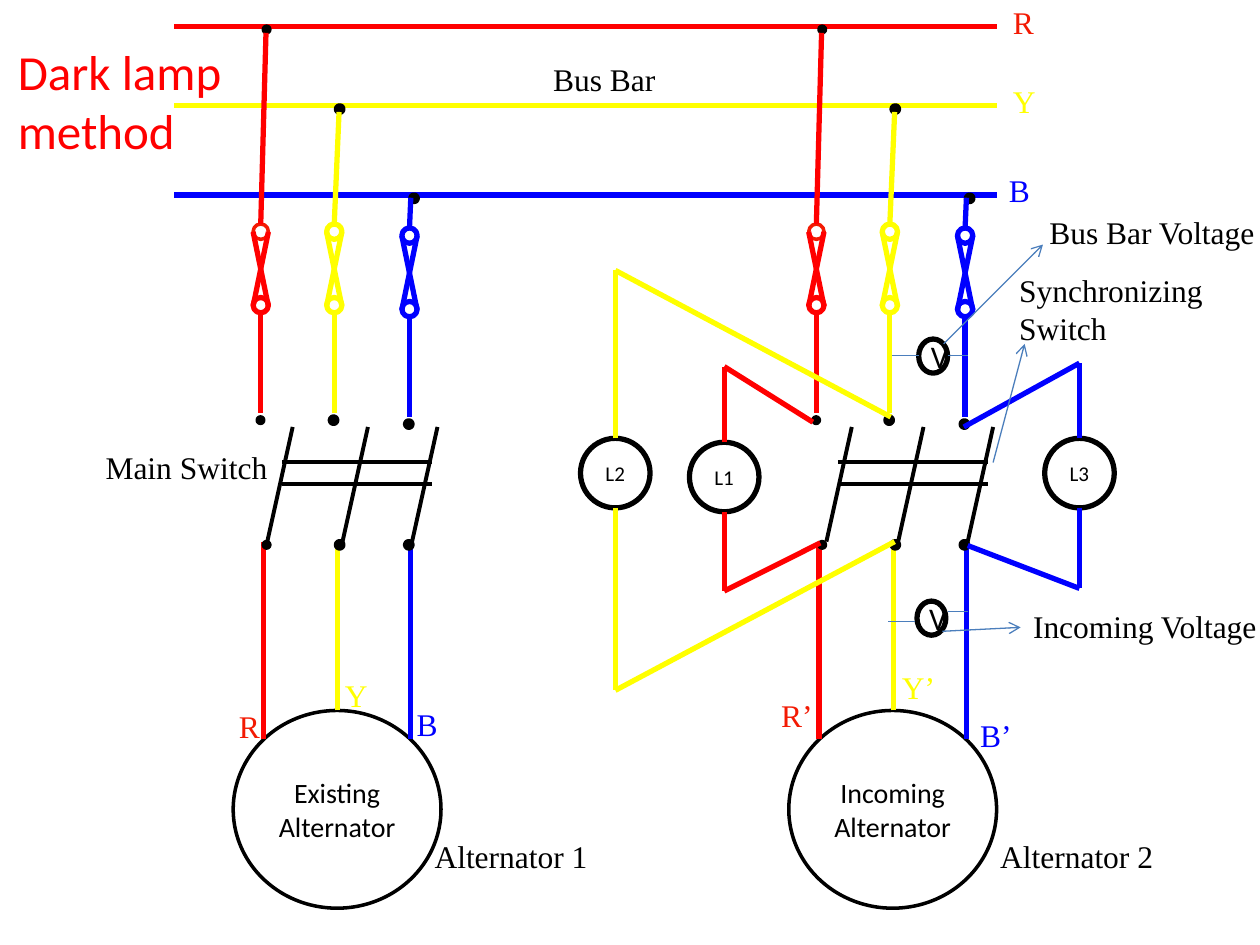
from dataclasses import dataclass

import pptx
import pptx.dml.color
import pptx.enum.shapes
import pptx.enum.text
import pptx.oxml
import pptx.oxml.ns
import pptx.util

Pt = pptx.util.Pt
RGBColor = pptx.dml.color.RGBColor
Shape = pptx.enum.shapes.MSO_SHAPE
Align = pptx.enum.text.PP_ALIGN
Anchor = pptx.enum.text.MSO_ANCHOR
Fit = pptx.enum.text.MSO_AUTO_SIZE
Point = tuple[float, float]

RED = RGBColor(0xFF, 0x00, 0x00)
BRICK = RGBColor(0xF3, 0x1A, 0x03)
YELLOW = RGBColor(0xFF, 0xFF, 0x00)
BLUE = RGBColor(0x00, 0x00, 0xFF)
STEEL = RGBColor(0x4B, 0x7E, 0xBC)
BLACK = RGBColor(0, 0, 0)
WHITE = RGBColor(0xFF, 0xFF, 0xFF)

SHIFT = 317.5  # from the existing to the incoming machine
DOT, RING, SPAN = 3.75, 8.75, 42
POLE = 309.5  # lower switch contacts


@dataclass
class Phase:
    color: RGBColor
    bus: float  # height of the bus bar
    tap: float  # left of the dot on the bus bar
    top: Point  # upper end of the wire to the fuse
    fuse: Point  # top centre of the fuse
    upper: float  # left of the upper contact
    lower: float  # left of the lower contact
    lead: Point  # where the lead meets the machine
    edge: float  # dot outline width
    rim: RGBColor  # upper fuse ring colour
    width: float  # upper fuse ring width


@dataclass
class Lamp:
    name: str
    color: RGBColor
    left: float
    top: float
    peak: float
    base: float
    start: Point
    end: Point


@dataclass
class Label:
    text: str
    left: float
    top: float
    width: float
    color: RGBColor = BLACK


PHASES = [
    Phase(RED, 15, 150.5, (152, 18.75), (149, 128), 147, 150.5,
          (150.5, 422.5), 2, BRICK, 2),
    Phase(YELLOW, 60.5, 192.25, (193.75, 64), (191, 128), 188.75, 192.25,
          (193, 406), 3, YELLOW, 3),
    Phase(BLUE, 111.5, 234.75, (234.75, 113), (234, 130.25), 231.75, 231.75,
          (234.75, 422.5), 3, BLUE, 3),
]
BLADES = [152.75, 195.75, 235.5, 472.25, 513.25, 553]
LAMPS = [
    Lamp("L1", RED, 394, 252.75, 209.5, 337.75, (464.5, 241.25), (468.75, 310.25)),
    Lamp("L2", YELLOW, 331.75, 250.5, 154.5, 394.5, (509, 238.25), (511.25, 309.5)),
    Lamp("L3", BLUE, 597, 250.5, 207.5, 336.25, (550.75, 244), (553, 311.75)),
]
LABELS = [
    Label("Alternator 1", 241.25, 474.5, 103),
    Label("Alternator 2", 564.5, 474.5, 103),
    Label("R", 571.75, -2, 26.75, BRICK),
    Label("R", 129.5, 400.5, 26.75, BRICK),
    Label("R’", 439.25, 394, 32.5, BRICK),
    Label("Y", 571.75, 43.25, 27.5, YELLOW),
    Label("Y’", 508.25, 378, 33.75, YELLOW),
    Label("Y", 190, 382.5, 28, YELLOW),
    Label("B", 569.5, 94.25, 26.75, BLUE),
    Label("B’", 553, 405.5, 32.5, BLUE),
    Label("B", 231, 399.5, 26.75, BLUE),
    Label("Main Switch", 53.25, 252.75, 108),
    Label("Synchronizing\nSwitch", 575.25, 151.25, 125.25),
    Label("Bus Bar", 309, 31, 73.5),
    Label("Bus Bar Voltage", 592.5, 118, 133.25),
    Label("Incoming Voltage", 583.25, 343.5, 143.25),
]


def write(frame, text: str, size: float, font: str, color: RGBColor, align=None) -> None:
    for num, line in enumerate(text.split("\n")):
        para = frame.paragraphs[0] if num == 0 else frame.add_paragraph()
        para.alignment = align
        run = para.add_run()
        run.text = line
        run.font.size, run.font.name = Pt(size), font
        run.font.color.rgb = color


def wire(start: Point, end: Point, color: RGBColor, width: float = 3,
         arrow: bool = False) -> None:
    line = shapes.add_connector(pptx.enum.shapes.MSO_CONNECTOR.STRAIGHT,
                                *map(Pt, start + end))
    line.line.color.rgb = color
    line.line.width = Pt(width)
    if arrow:
        tail = pptx.oxml.parse_xml(
            f'<a:tailEnd {pptx.oxml.ns.nsdecls("a")} type="arrow"/>')
        line.line._get_or_add_ln().append(tail)
    line._element.spPr.append(
        pptx.oxml.parse_xml(f'<a:effectLst {pptx.oxml.ns.nsdecls("a")}/>'))


def disc(left: float, top: float, width: float, height: float, edge: float,
         rim: RGBColor = BLACK, fill: RGBColor = WHITE,
         text: str = "", size: float = 18) -> None:
    oval = shapes.add_shape(Shape.FLOWCHART_CONNECTOR,
                            *map(Pt, (left, top, width, height)))
    oval.shadow.inherit = False
    oval.fill.solid()
    oval.fill.fore_color.rgb = fill
    oval.line.color.rgb = rim
    oval.line.width = Pt(edge)
    if text:
        oval.text_frame.vertical_anchor = Anchor.MIDDLE
        write(oval.text_frame, text, size, "Calibri", BLACK, Align.CENTER)


def dot(left: float, top: float, edge: float) -> None:
    disc(left, top, DOT, DOT, edge, fill=BLACK)


def branch(part: Phase, dx: float) -> None:
    """Draw one phase from the bus bar down to the machine."""
    x, y = part.fuse[0] + dx, part.fuse[1]
    half = RING / 2
    foot = (part.lead[0] + dx, part.lead[1])
    wire(foot, (foot[0], POLE), part.color)
    dot(part.lower + dx, POLE, part.edge)
    dot(part.tap + dx, part.bus, part.edge)
    disc(x - half, y, RING, RING, part.width, part.rim)
    disc(x - half, y + SPAN, RING, RING, 3, part.color)
    for side in (-half, half):
        wire((x + side, y + 47), (x - side, y + 4.5), part.color)
    wire((part.top[0] + dx, part.top[1]), (x, y), part.color)
    wire((x, y + 51.25), (x, y + 108.25), part.color)
    dot(part.upper + dx, y + 110.25, part.edge)


def light(lamp: Lamp) -> None:
    size = 39.75
    mid = lamp.left + size / 2
    disc(lamp.left, lamp.top, size, size, 3, text=lamp.name, size=12)
    for rim, far, end in ((lamp.top, lamp.peak, lamp.start),
                          (lamp.top + size, lamp.base, lamp.end)):
        wire((mid, rim), (mid, far), lamp.color)
        wire((mid, far), end, lamp.color)


def note(label: Label) -> None:
    height = 29 + 22 * label.text.count("\n")
    box = shapes.add_textbox(*map(Pt, (label.left, label.top, label.width, height)))
    box.text_frame.word_wrap = False
    box.text_frame.auto_size = Fit.SHAPE_TO_FIT_TEXT
    write(box.text_frame, label.text, 18, "Times New Roman", label.color)


deck = pptx.Presentation()
deck.slide_width, deck.slide_height = Pt(720), Pt(540)
slide = deck.slides.add_slide(deck.slide_layouts[5])
shapes = slide.shapes

# Title
title = shapes.title
title.left, title.top, title.width, title.height = map(Pt, (3, 20, 142, 75))
title.text_frame.auto_size = Fit.NONE
title.text_frame.vertical_anchor = Anchor.TOP
write(title.text_frame, "Dark lamp\nmethod", 28, "Calibri", RED, Align.LEFT)

# Bus bars
for part in PHASES:
    wire((99.5, part.bus), (569.5, part.bus), part.color)

# Machines with their three phases
for dx, name in ((0, "Existing Alternator"), (SHIFT, "Incoming Alternator")):
    disc(133.25 + dx, 406, 118.75, 113, 2, text=name, size=16)
    for part in PHASES:
        branch(part, dx)
    for y in (264.25, 276.5):
        wire((161.25 + dx, y), (247 + dx, y), BLACK, 2.25)

# Switch blades and lamps
for x in BLADES:
    wire((x, POLE), (x + 14.5, 244), BLACK, 2.25)
for lamp in LAMPS:
    light(lamp)

# Voltmeters and their leads
for left, top in ((525, 193.75), (524, 343.5)):
    disc(left, top, 16.5, 19.5, 3, text="V")
for left, right, y in ((509.75, 525, 203), (541.5, 553, 203),
                       (507.5, 522.75, 355), (541.5, 553, 349.25)):
    wire((left, y), (right, y), STEEL, 0.75)

# Labels and pointers
for label in LABELS:
    note(label)
for start, end in (((567.5, 264.25), (585.5, 196.5)),
                   ((539.25, 196.5), (596, 139.75)),
                   ((538.5, 360.75), (583.25, 358.5))):
    wire(start, end, STEEL, 0.75, arrow=True)

deck.save("out.pptx")
